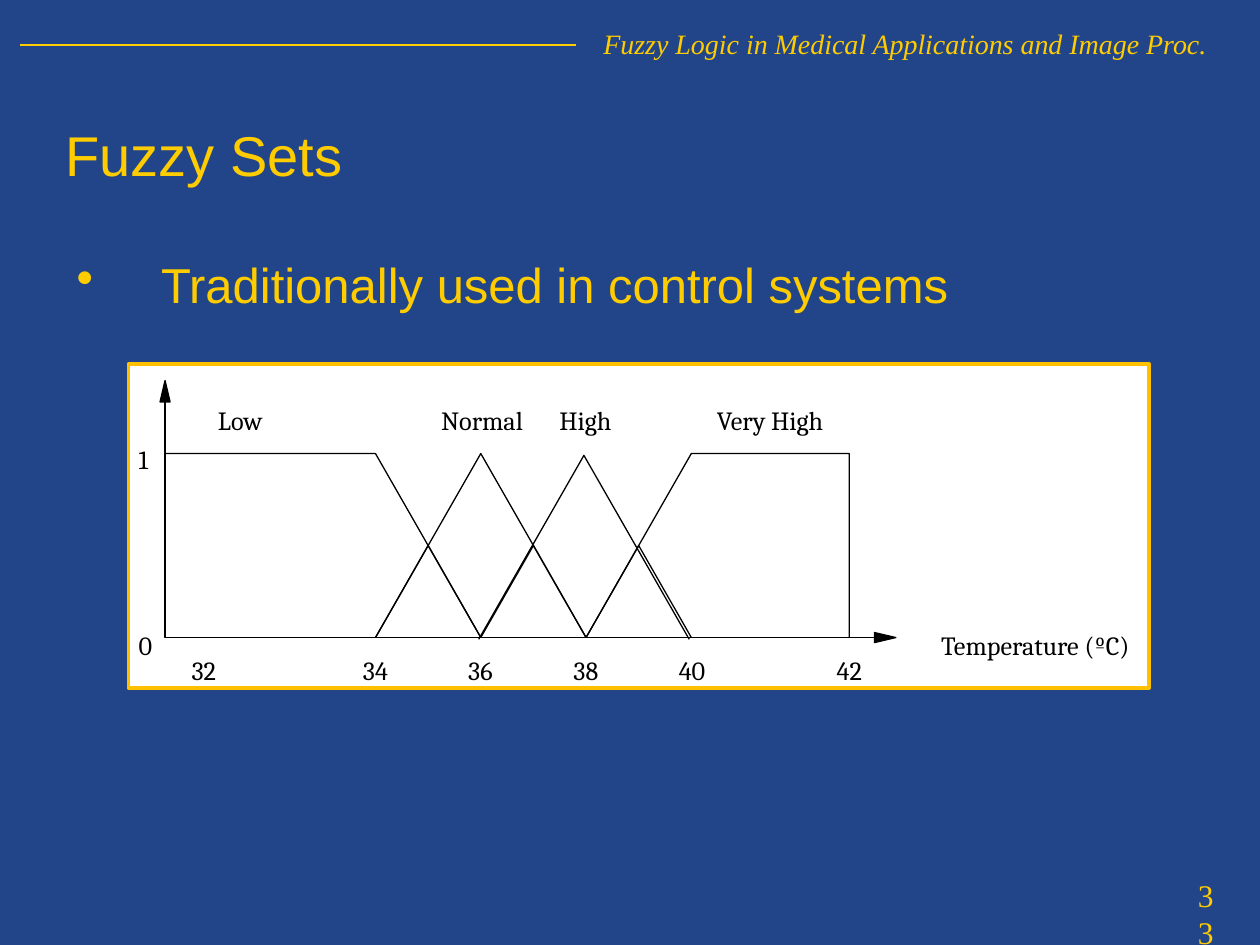
import dataclasses

import lxml.etree
import pptx
import pptx.dml.color
import pptx.enum.shapes
import pptx.oxml
import pptx.oxml.ns
import pptx.util

COLUMNS, ROWS = 100, 75
SLIDE_WIDTH, SLIDE_HEIGHT = pptx.util.Inches(10), pptx.util.Inches(7.5)


@dataclasses.dataclass(frozen=True)
class Theme:
    """Hold the colours, fonts and type sizes of the slide."""
    background: str = "22458A"
    accent: str = "FFCC00"
    frame: str = "FFC000"
    paper: str = "FFFFFF"
    ink: str = "000000"
    serif: str = "Times New Roman"
    sans: str = "Arial"
    label: str = "Cambria"
    header_size: int = 16
    number_size: int = 18
    title_size: int = 32
    body_size: int = 28
    label_size: int = 15


@dataclasses.dataclass(frozen=True)
class Box:
    """Describe an area in grid columns and rows."""
    left: float
    top: float
    width: float
    height: float

    def inner(self, left, top, width, height):
        """Return an area placed relative to this one."""
        return Box(self.left + left, self.top + top, width, height)

    def lengths(self):
        """Return the area as slide lengths."""
        return across(self.left), down(self.top), across(self.width), down(self.height)


THEME = Theme()


def across(columns):
    """Convert grid columns to a length."""
    return round(SLIDE_WIDTH * columns / COLUMNS)


def down(rows):
    """Convert grid rows to a length."""
    return round(SLIDE_HEIGHT * rows / ROWS)


def rgb(value):
    """Return the colour for a hexadecimal value."""
    return pptx.dml.color.RGBColor.from_string(value)


def add_text(shapes, box, text, *, size, font, color=THEME.accent, italic=False,
             inset=True, wrap=True, bullet_indent=0):
    """Add a text box with one formatted paragraph."""
    frame = shapes.add_textbox(*box.lengths()).text_frame
    frame.word_wrap = wrap
    if not inset:
        frame.margin_left = frame.margin_right = frame.margin_top = frame.margin_bottom = 0
    paragraph = frame.paragraphs[0]
    paragraph.text = text
    if bullet_indent:
        properties = paragraph._p.get_or_add_pPr()
        properties.set("marL", str(across(bullet_indent)))
        properties.set("indent", str(-across(bullet_indent)))
        bullet = lxml.etree.SubElement(properties, pptx.oxml.ns.qn("a:buChar"))
        bullet.set("char", "•")
    paragraph.font.name = font
    paragraph.font.size = pptx.util.Pt(size)
    paragraph.font.italic = italic
    paragraph.font.color.rgb = rgb(color)


def add_outline(shapes, points, filled=False):
    """Draw a hairline through grid points, closed and filled on request."""
    start, *others = [(across(x), down(y)) for x, y in points]
    builder = shapes.build_freeform(*start)
    builder.add_line_segments(others, close=filled)
    shape = builder.convert_to_shape()
    shape.shadow.inherit = False
    if filled:
        shape.fill.solid()
        shape.fill.fore_color.rgb = rgb(THEME.ink)
    else:
        shape.fill.background()
    shape.line.color.rgb = rgb(THEME.ink)
    shape.line.width = pptx.util.Pt(0)


def add_header(slide, box):
    """Place the rule and the running title."""
    middle = down(box.top + 2)
    rule = slide.shapes.add_connector(
        pptx.enum.shapes.MSO_CONNECTOR.STRAIGHT,
        across(box.left), middle, across(box.left + 44.1), middle)
    rule.line.color.rgb = rgb(THEME.accent)
    rule.line.width = pptx.util.Pt(1)
    lxml.etree.SubElement(rule._element.spPr, pptx.oxml.ns.qn("a:effectLst"))
    add_text(slide.shapes, box.inner(45.3, 0, 53.1, 3.7),
             "Fuzzy Logic in Medical Applications and Image Proc.",
             size=THEME.header_size, font=THEME.serif, italic=True)


def add_content(slide, box):
    """Place the title and the bullet."""
    add_text(slide.shapes, box.inner(0, 0, 24.2, 6.4), "Fuzzy Sets",
             size=THEME.title_size, font=THEME.sans, wrap=False)
    add_text(slide.shapes, box.inner(0.9, 10.6, 87.1, 6), "Traditionally used in control systems",
             size=THEME.body_size, font=THEME.sans, bullet_indent=6.7)


def add_page_number(slide, box):
    """Place the page number."""
    add_text(slide.shapes, box, "33", size=THEME.number_size, font=THEME.serif)


def add_panel(shapes, box):
    """Place the framed panel behind the diagram."""
    panel = shapes.add_shape(pptx.enum.shapes.MSO_SHAPE.RECTANGLE, *box.lengths())
    panel.shadow.inherit = False
    panel.fill.solid()
    panel.fill.fore_color.rgb = rgb(THEME.paper)
    panel.line.color.rgb = rgb(THEME.frame)
    panel.line.width = pptx.util.Pt(2)


def add_memberships(shapes, plot):
    """Draw the fuzzy sets and their overlaps in plot steps and degrees."""
    step = plot.width / 6.5
    curves = [
        [(2.98, -0.01), (3.98, 0.99), (4.98, -0.01)],
        [(2, 0), (3, 1), (4, 0)],
        [(0, 0), (0, 1), (2, 1), (3, 0)],
        [(4, 0), (5, 1), (6.5, 1), (6.5, 0)],
    ] + [[(start, 0), (start + 0.5, 0.5), (start + 1, 0)] for start in (2, 3, 4)]
    for curve in curves:
        add_outline(shapes, [(plot.left + x * step, plot.top + (1 - degree) * plot.height)
                             for x, degree in curve])


def add_axes(shapes, plot):
    """Draw both axes with their arrowheads."""
    left, bottom = plot.left, plot.top + plot.height
    tip_y, tip_x = plot.top - 5.8, left + 58
    half, length = 0.4, 1.7
    add_outline(shapes, [(left, tip_y + length), (left, bottom), (tip_x - length, bottom)])
    add_outline(shapes, [(left - half, tip_y + length), (left, tip_y),
                         (left + half, tip_y + length)], filled=True)
    add_outline(shapes, [(tip_x - length, bottom - half), (tip_x, bottom),
                         (tip_x - length, bottom + half)], filled=True)


def add_labels(shapes, plot):
    """Write the set names, the degrees and the temperatures."""
    step, bottom = plot.width / 6.5, plot.height
    labels = [("Low", 4.2, -3.9), ("Normal", 21.9, -3.9), ("High", 31.3, -3.9),
              ("Very High", 43.8, -3.9), ("1", -2.1, -0.8), ("0", -2.1, bottom - 0.7),
              ("Temperature (ºC)", 61.6, bottom - 0.7), ("32", 2.1, bottom + 1.3)]
    labels += [(text, steps * step - 1, bottom + 1.3)
               for text, steps in (("34", 2), ("36", 3), ("38", 4), ("40", 5), ("42", 6.5))]
    for text, left, top in labels:
        add_text(shapes, plot.inner(left, top, 1.9 + len(text), 2.9), text,
                 size=THEME.label_size, font=THEME.label, color=THEME.ink, inset=False)


def add_diagram(slide, box):
    """Place the membership diagram as one group."""
    shapes = slide.shapes.add_group_shape().shapes
    plot = box.inner(2.9, 7.1, 54.3, 14.6)
    add_panel(shapes, box)
    add_memberships(shapes, plot)
    add_labels(shapes, plot)
    add_axes(shapes, plot)


def main():
    """Build and save the slide."""
    presentation = pptx.Presentation()
    presentation.slide_width, presentation.slide_height = SLIDE_WIDTH, SLIDE_HEIGHT
    slide = presentation.slides.add_slide(presentation.slide_layouts[6])
    slide.background.fill.solid()
    slide.background.fill.fore_color.rgb = rgb(THEME.background)
    add_header(slide, Box(1.6, 1.6, 98.4, 3.7))
    add_page_number(slide, Box(94.1, 69, 3.3, 4))
    add_content(slide, Box(4.2, 9.1, 88, 49.5))
    add_diagram(slide, Box(10.2, 28.9, 81, 25.7))
    presentation.save("out.pptx")


if __name__ == "__main__":
    main()
